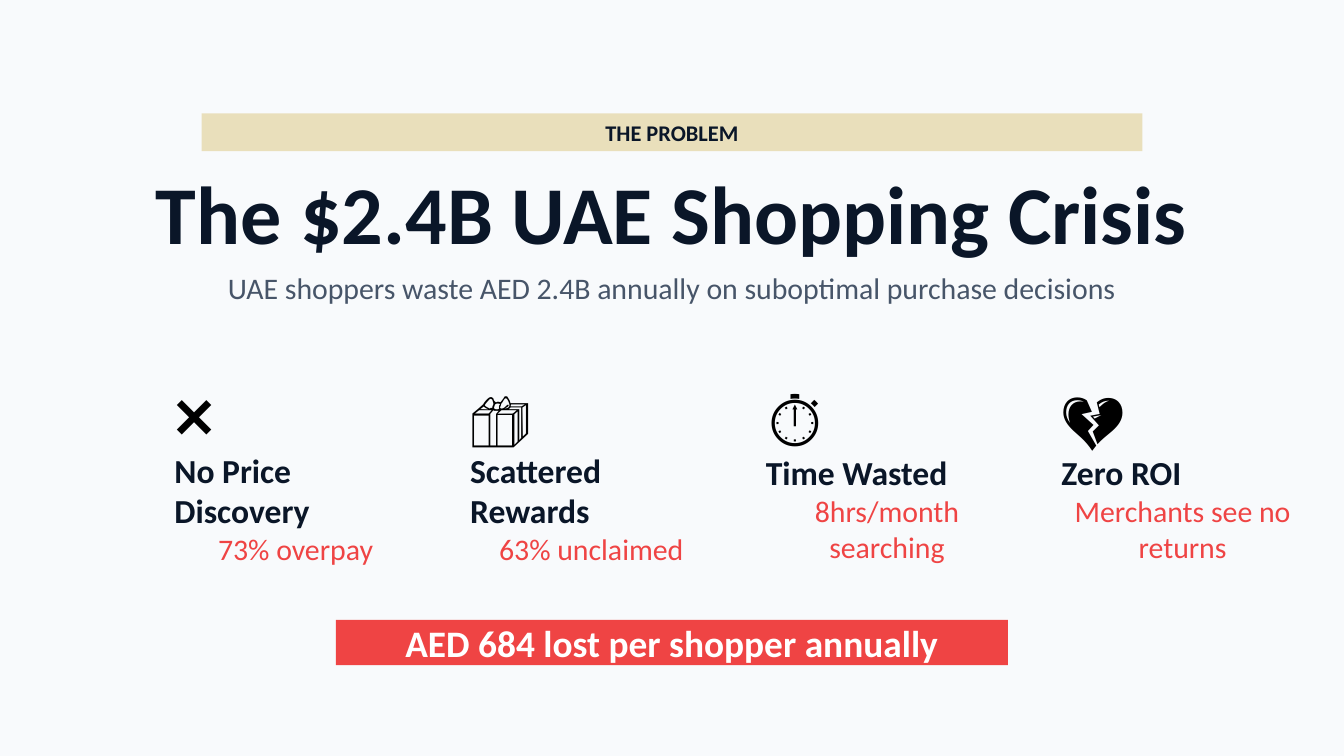
from lxml import etree
from pptx import Presentation
from pptx.dml.color import RGBColor
from pptx.enum.shapes import MSO_SHAPE
from pptx.enum.text import MSO_ANCHOR, MSO_AUTO_SIZE, PP_ALIGN
from pptx.oxml.ns import qn
from pptx.util import Inches, Pt

LEFT, MID = PP_ALIGN.LEFT, PP_ALIGN.CENTER
RECT = MSO_SHAPE.RECTANGLE
HEX = {"page": "F8FAFC", "gold": "C9A227", "navy": "0A1628", "slate": "475569",
       "red": "EF4444", "white": "FFFFFF", "black": "000000"}

deck = Presentation()
deck.slide_width, deck.slide_height = Inches(10), Inches(10 * 9 / 16)
slide = deck.slides.add_slide(deck.slide_layouts[5])
shapes = slide.shapes
slide.background.fill.solid()
slide.background.fill.fore_color.rgb = RGBColor.from_string(HEX["page"])


def area(x, y, w, h):
    """Turn shares of the slide's width and height into lengths."""
    wide, high = deck.slide_width, deck.slide_height
    return round(x * wide), round(y * high), round(w * wide), round(h * high)


def write(shape, lines):
    """Fill a shape with lines of (text, size, colour, bold, alignment)."""
    frame = shape.text_frame
    frame.word_wrap = True
    frame.auto_size = MSO_AUTO_SIZE.NONE
    frame.vertical_anchor = MSO_ANCHOR.MIDDLE
    for i, (text, size, color, bold, align) in enumerate(lines):
        para = frame.add_paragraph() if i else frame.paragraphs[0]
        para.alignment = align
        run = para.add_run()
        run.text = text
        run.font.name = "Calibri"
        run.font.size = Pt(size)
        run.font.bold = bold
        run.font.color.rgb = RGBColor.from_string(HEX[color])


# Heading
title = shapes.title
title.left, title.top, title.width, title.height = area(0.1, 0.22, 0.8, 0.12)
write(title, [("The $2.4B UAE Shopping Crisis", 44, "navy", True, MID)])

lead = shapes.add_textbox(*area(0.15, 0.35, 0.7, 0.06))
write(lead, [("UAE shoppers waste AED 2.4B annually on suboptimal purchase decisions",
              16, "slate", False, MID)])

# Tag above the title and loss banner at the foot
bars = [
    ((0.15, 0.15, 0.7, 0.05), "gold", 30, ("THE PROBLEM", 12, "navy", True, MID)),
    ((0.25, 0.82, 0.5, 0.06), "red", 100,
     ("AED 684 lost per shopper annually", 20, "white", True, MID)),
]
for place, color, alpha, line in bars:
    bar = shapes.add_shape(RECT, *area(*place))
    bar.shadow.inherit = False
    bar.line.fill.background()
    bar.fill.solid()
    bar.fill.fore_color.rgb = RGBColor.from_string(HEX[color])
    if alpha < 100:
        tint = bar.fill._xPr.find(qn("a:solidFill"))[0]
        etree.SubElement(tint, qn("a:alpha")).set("val", str(alpha * 1000))
    write(bar, [line])

# Four problems in equal columns
cards = [
    ("❌", "No Price Discovery", "73% overpay"),
    ("🎁", "Scattered Rewards", "63% unclaimed"),
    ("⏱️", "Time Wasted", "8hrs/month searching"),
    ("💔", "Zero ROI", "Merchants see no returns"),
]
for col, (icon, name, fact) in enumerate(cards):
    card = shapes.add_textbox(*area(0.12 + 0.22 * col, 0.5, 0.2, 0.25))
    write(card, [(icon, 32, "black", False, LEFT),
                 (name, 18, "navy", True, LEFT),
                 (fact, 16, "red", False, MID)])

deck.save("out.pptx")
